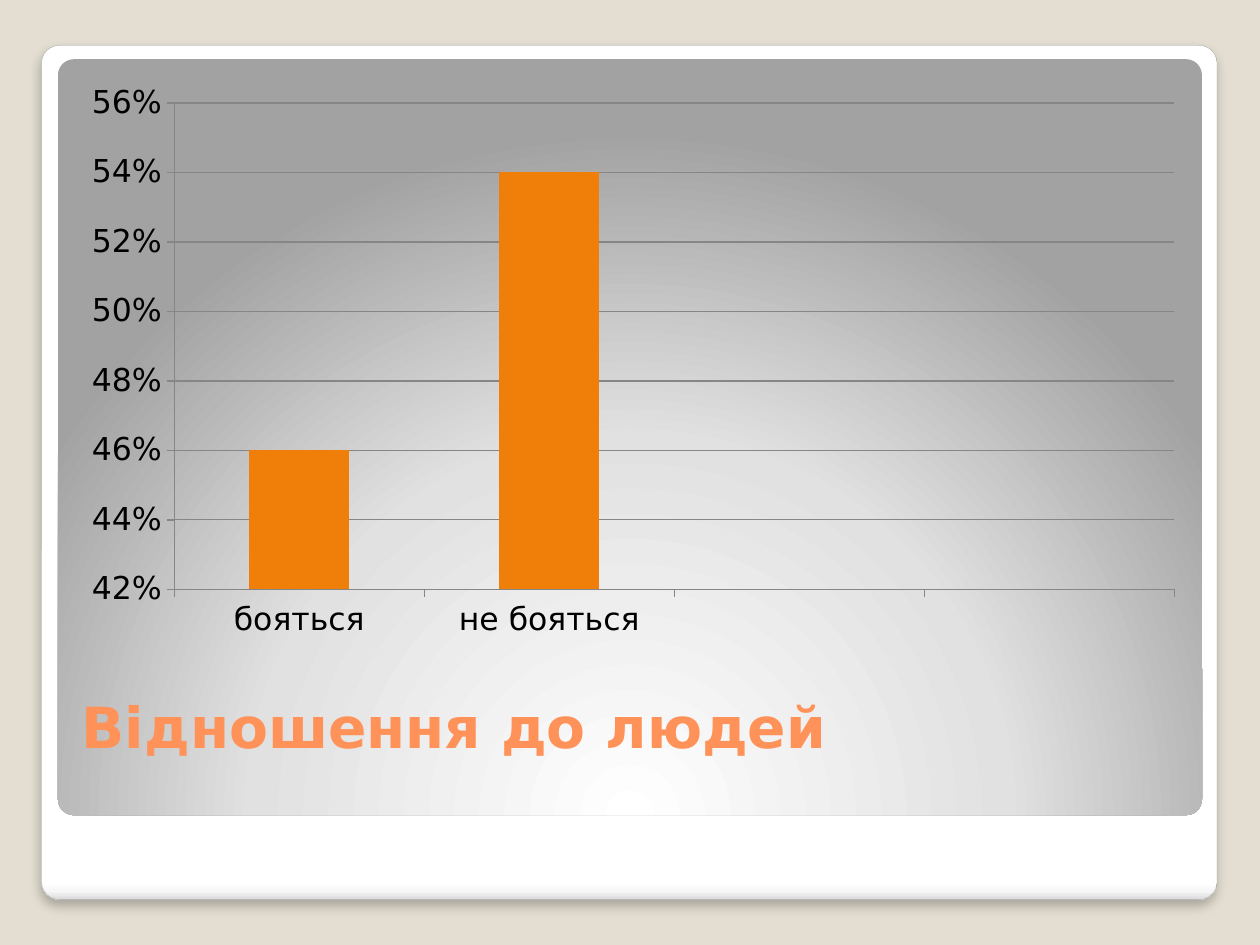
from dataclasses import dataclass

from lxml import etree
from pptx import Presentation
from pptx.chart.data import CategoryChartData
from pptx.dml.color import RGBColor
from pptx.enum.chart import XL_CHART_TYPE, XL_TICK_MARK
from pptx.enum.shapes import MSO_SHAPE
from pptx.enum.text import MSO_ANCHOR
from pptx.oxml.ns import qn
from pptx.util import Inches, Pt

COLUMN_CLUSTERED = XL_CHART_TYPE.COLUMN_CLUSTERED
TICK_OUTSIDE = XL_TICK_MARK.OUTSIDE
ROUNDED_RECTANGLE = MSO_SHAPE.ROUNDED_RECTANGLE
ANCHOR_BOTTOM = MSO_ANCHOR.BOTTOM


@dataclass(frozen=True)
class Theme:
    font: str = "DejaVu Sans"
    background: str = "E3DED1"
    frame_line: str = "A4A4A4"
    shadow: str = "000000"
    title: str = "FF9258"
    bar: str = "F07F09"
    grid: str = "868686"
    label: str = "000000"
    title_size: float = 32.4
    label_size: float = 18
    frame_stops: tuple = ((0, "FFFFFF"), (98, "FFFFFF"), (99, "F7F7F7"), (100, "DADADA"))
    panel_stops: tuple = ((0, "FFFFFF"), (55, "E1E1E1"), (100, "A2A2A2"))


THEME = Theme()


def add_gradient_panel(slide, left, top, width, height, stops, direction):
    """Add a rounded panel; direction is the a:lin or a:path element of its gradient."""
    shape = slide.shapes.add_shape(
        ROUNDED_RECTANGLE, Inches(left), Inches(top), Inches(width), Inches(height))
    shape.adjustments[0] = 0.021
    shape.shadow.inherit = False
    shape.line.fill.background()
    shape.fill.gradient()
    gradient = shape.element.spPr.find(qn("a:gradFill"))
    for child in list(gradient):
        gradient.remove(child)
    stop_list = etree.SubElement(gradient, qn("a:gsLst"))
    for position, color in stops:
        stop = etree.SubElement(stop_list, qn("a:gs"), pos=str(position * 1000))
        etree.SubElement(stop, qn("a:srgbClr"), val=color)
    gradient.append(direction)
    return shape


def add_text(slide, text, *, left, top, width, height, size, color, bold=False,
             anchor=ANCHOR_BOTTOM, bottom_margin=0.05):
    text_box = slide.shapes.add_textbox(
        Inches(left), Inches(top), Inches(width), Inches(height))
    frame = text_box.text_frame
    frame.word_wrap = True
    frame.vertical_anchor = anchor
    frame.margin_bottom = Inches(bottom_margin)
    run = frame.paragraphs[0].add_run()
    run.text = text
    run.font.name = THEME.font
    run.font.size = Pt(size)
    run.font.bold = bold
    run.font.color.rgb = RGBColor.from_string(color)


presentation = Presentation()
presentation.slide_width = Inches(10)
presentation.slide_height = Inches(7.5)
slide = presentation.slides.add_slide(presentation.slide_layouts[6])
slide.background.fill.solid()
slide.background.fill.fore_color.rgb = RGBColor.from_string(THEME.background)

# White frame with a soft shadow below it
downward = etree.Element(qn("a:lin"), ang="5400000", scaled="0")
frame_panel = add_gradient_panel(
    slide, 0.33, 0.36, 9.33, 6.78, THEME.frame_stops, downward)
frame_panel.line.color.rgb = RGBColor.from_string(THEME.frame_line)
frame_panel.line.width = Pt(0.16)
effects = frame_panel.element.spPr.find(qn("a:effectLst"))
shadow = etree.SubElement(
    effects, qn("a:outerShdw"), blurRad=str(Pt(6)), dist=str(Pt(4)),
    dir="5400000", algn="t", rotWithShape="0")
shadow_color = etree.SubElement(shadow, qn("a:srgbClr"), val=THEME.shadow)
etree.SubElement(shadow_color, qn("a:alpha"), val="25000")

# Grey panel lit from the bottom centre
radial = etree.Element(qn("a:path"), {"path": "circle"})
etree.SubElement(radial, qn("a:fillToRect"), l="50000", t="175000", r="50000", b="-75000")
add_gradient_panel(slide, 0.46, 0.47, 9.08, 6, THEME.panel_stops, radial)

add_text(slide, "Відношення до людей", left=0.55, top=5.45, width=8.95, height=1.15,
         size=THEME.title_size, color=THEME.title, bold=True, bottom_margin=0.57)

# Column chart: the two right-hand slots stay empty
chart_data = CategoryChartData(number_format="0%")
chart_data.categories = ["бояться", "не бояться", "", ""]
chart_data.add_series("Series 1", [0.46, 0.54, None, None])
chart = slide.shapes.add_chart(
    COLUMN_CLUSTERED, Inches(0.55), Inches(0.58), Inches(8.95), Inches(4.58),
    chart_data).chart
chart.has_legend = False
chart.has_title = False
chart.font.name = THEME.font
chart.font.size = Pt(THEME.label_size)
chart.font.color.rgb = RGBColor.from_string(THEME.label)

plot = chart.plots[0]
plot.gap_width = 150
plot.vary_by_categories = False
bars = plot.series[0].format.fill
bars.solid()
bars.fore_color.rgb = RGBColor.from_string(THEME.bar)

value_axis = chart.value_axis
value_axis.minimum_scale = 0.42
value_axis.maximum_scale = 0.56
value_axis.major_unit = 0.02
value_axis.has_major_gridlines = True
value_axis.tick_labels.number_format = "0%"
value_axis.tick_labels.number_format_is_linked = False
for axis in (chart.category_axis, value_axis):
    axis.major_tick_mark = TICK_OUTSIDE
for lines in (chart.category_axis, value_axis, value_axis.major_gridlines):
    lines.format.line.color.rgb = RGBColor.from_string(THEME.grid)
    lines.format.line.width = Pt(0.75)

presentation.save("out.pptx")
